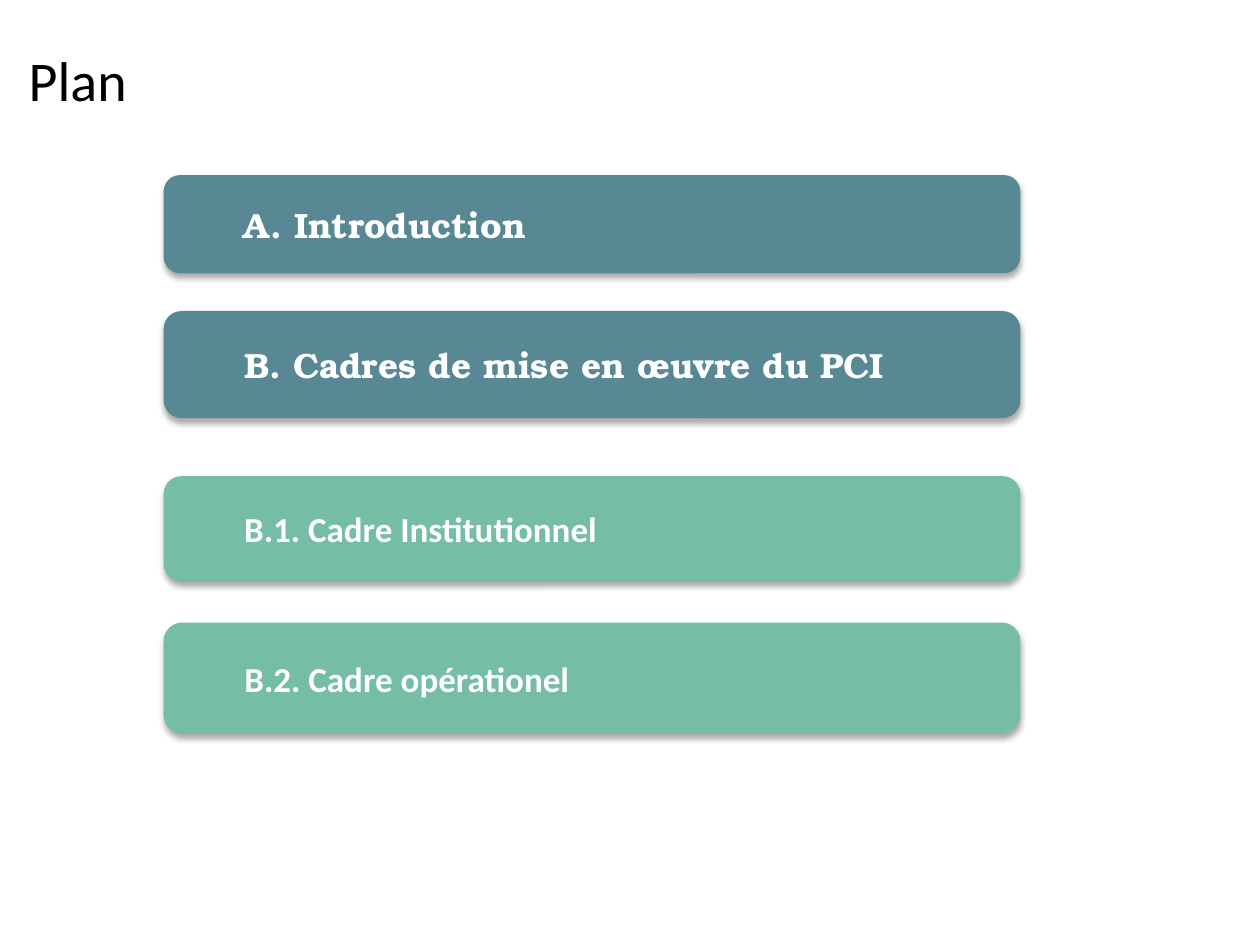
from dataclasses import dataclass

from lxml import etree
from pptx import Presentation, util as u
from pptx.dml.color import RGBColor
from pptx.enum import shapes, text
from pptx.oxml.ns import qn


@dataclass(frozen=True)
class Theme:
    ink: str = "000000"
    white: str = "FFFFFF"
    section: str = "588894"
    subsection: str = "75BDA7"
    serif: str = "TeX Gyre Bonum"
    sans: str = "Calibri"
    title_size: int = 32
    bar_size: int = 20


def write(tf, words, *, font, size, color, bold=False, indent=0, after=0):
    """Put one left-aligned, vertically centred paragraph in a text frame."""
    tf.word_wrap = True
    tf.vertical_anchor = text.MSO_ANCHOR.MIDDLE
    p = tf.paragraphs[0]
    p.alignment = text.PP_ALIGN.LEFT
    p.space_after = u.Pt(after)
    pPr = p._p.get_or_add_pPr()
    pPr.set("marL", str(u.Cm(indent)))
    pPr.set("indent", "0")
    r = p.add_run()
    r.text = words
    r.font.name, r.font.size, r.font.bold = font, u.Pt(size), bold
    r.font.color.rgb = RGBColor.from_string(color)


class Deck:
    def __init__(self, theme, width, height):
        self.theme = theme
        self.prs = Presentation()
        self.prs.slide_width, self.prs.slide_height = u.Cm(width), u.Cm(height)
        self.s = self.prs.slides.add_slide(self.prs.slide_layouts[6])

    def title(self, words, *box):
        sp = self.s.shapes.add_textbox(*map(u.Cm, box))
        write(sp.text_frame, words, font=self.theme.sans,
              size=self.theme.title_size, color=self.theme.ink)

    def bar(self, words, *box, fill, font):
        sp = self.s.shapes.add_shape(
            shapes.MSO_SHAPE.ROUNDED_RECTANGLE, *map(u.Cm, box))
        sp.fill.solid()
        sp.fill.fore_color.rgb = RGBColor.from_string(fill)
        sp.line.fill.background()
        self.drop_shadow(sp)
        write(sp.text_frame, words, font=font, size=self.theme.bar_size,
              color=self.theme.white, bold=True, indent=1.27, after=6)

    def drop_shadow(self, sp):
        sp.shadow.inherit = False
        effects = sp._element.spPr.find(qn("a:effectLst"))
        shadow = etree.SubElement(
            effects, qn("a:outerShdw"), blurRad=str(u.Pt(3.5)),
            dist=str(u.Pt(2.2)), dir="5400000", rotWithShape="0")
        color = etree.SubElement(shadow, qn("a:srgbClr"), val=self.theme.ink)
        etree.SubElement(color, qn("a:alpha"), val="32000")


def main():
    theme = Theme()
    deck = Deck(theme, 25.4, 19.05)

    # Title
    deck.title("Plan", 0.33, 0.61, 24.38, 1.96)

    # Outline bars: sections, then subsections of B
    section = dict(fill=theme.section, font=theme.serif)
    subsection = dict(fill=theme.subsection, font=theme.sans)
    bars = [
        ("A. Introduction", 3.53, 1.98, section),
        ("B. Cadres de mise en œuvre du PCI", 6.27, 2.16, section),
        ("B.1. Cadre Institutionnel", 9.6, 2.13, subsection),
        ("B.2. Cadre opérationel", 12.55, 2.24, subsection),
    ]
    for words, top, height, style in bars:
        deck.bar(words, 3.3, top, 17.27, height, **style)

    deck.prs.save("out.pptx")


if __name__ == "__main__":
    main()
